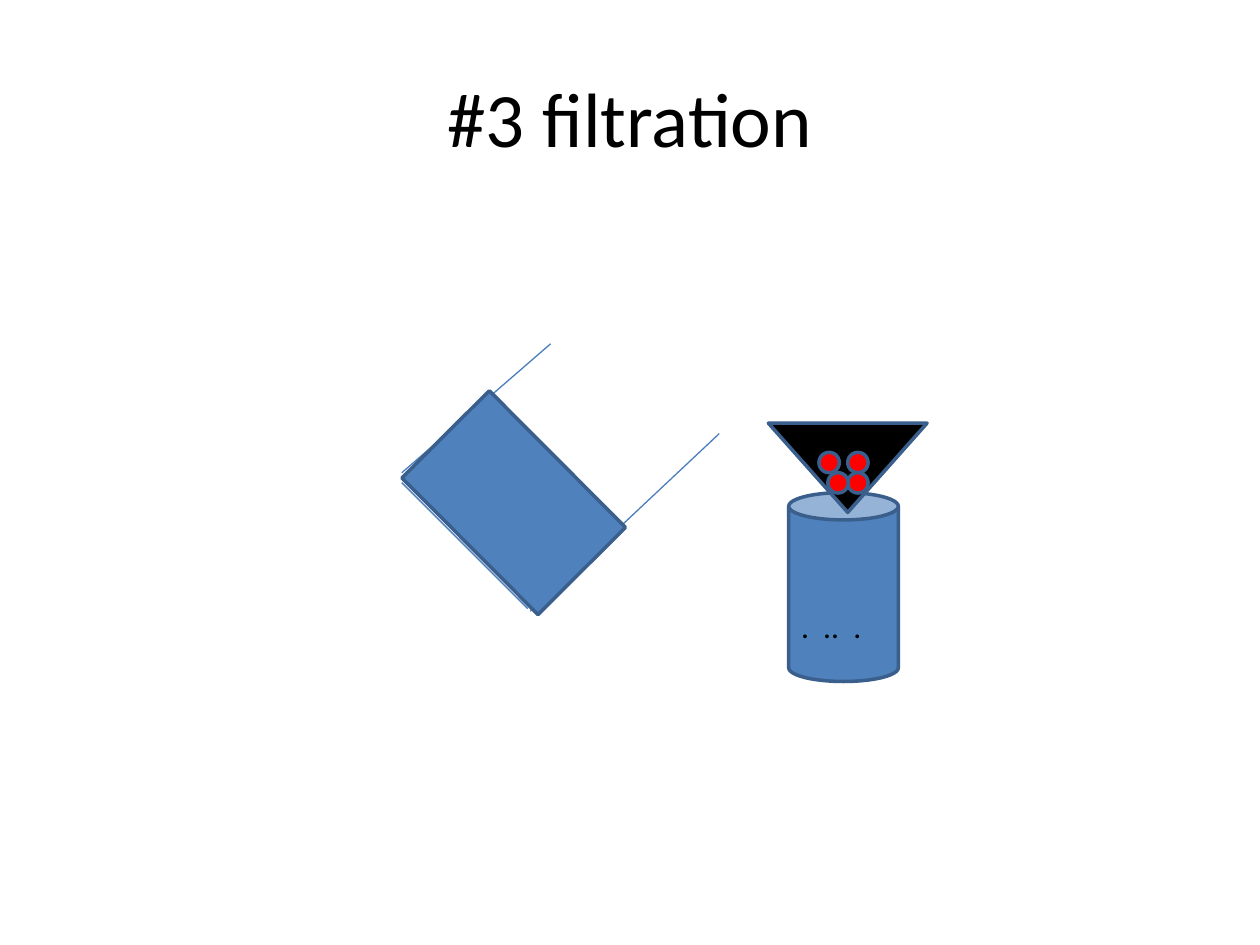
from dataclasses import dataclass

from lxml import etree
from pptx import Presentation
from pptx.dml.color import RGBColor
from pptx.enum.shapes import MSO_CONNECTOR, MSO_SHAPE
from pptx.enum.text import MSO_ANCHOR, PP_ALIGN
from pptx.oxml.ns import qn
from pptx.slide import Slide
from pptx.text.text import TextFrame
from pptx.util import Cm, Pt

CAN = MSO_SHAPE.CAN
FUNNEL = MSO_SHAPE.FLOWCHART_MERGE
RECTANGLE = MSO_SHAPE.RECTANGLE
OVAL = MSO_SHAPE.OVAL
STRAIGHT = MSO_CONNECTOR.STRAIGHT

BLUE = RGBColor(0x4F, 0x81, 0xBD)
OUTLINE = RGBColor(0x3A, 0x5F, 0x8C)
LINE_BLUE = RGBColor(0x4B, 0x7E, 0xBC)
RED = RGBColor(0xFF, 0x00, 0x00)
BLACK = RGBColor(0x00, 0x00, 0x00)

GRAIN_SIZE = 0.41


@dataclass(frozen=True)
class Part:
    """A filled piece of the apparatus, measured in centimetres."""
    kind: MSO_SHAPE
    left: float
    top: float
    width: float
    height: float
    fill: RGBColor
    rotation: float = 0


@dataclass(frozen=True)
class Edge:
    """A thin line between two points, measured in centimetres."""
    start_x: float
    start_y: float
    end_x: float
    end_y: float


JAR = Part(CAN, 15.9, 9.93, 2.21, 3.81, BLUE)
FILTER = Part(FUNNEL, 15.49, 8.53, 3.2, 1.8, BLACK)
LIQUID = Part(RECTANGLE, 8.41, 8.89, 3.89, 2.49, BLUE, 45.1)
BEAKER_EDGES = [
    Edge(8.1, 9.53, 11.1, 6.93),
    Edge(8.1, 9.73, 10.64, 12.27),
    Edge(10.69, 12.32, 14.5, 8.74),
]
GRAINS = [
    Part(OVAL, left, top, GRAIN_SIZE, GRAIN_SIZE, RED)
    for left, top in [(16.51, 9.12), (17.09, 9.12), (17.09, 9.53), (16.69, 9.53)]
]


def draw_part(slide: Slide, part: Part) -> None:
    shape = slide.shapes.add_shape(
        part.kind, Cm(part.left), Cm(part.top), Cm(part.width), Cm(part.height))
    shape.rotation = part.rotation
    shape.shadow.inherit = False
    shape.fill.solid()
    shape.fill.fore_color.rgb = part.fill
    shape.line.color.rgb = OUTLINE
    shape.line.width = Pt(2)


def draw_edge(slide: Slide, edge: Edge) -> None:
    connector = slide.shapes.add_connector(
        STRAIGHT, Cm(edge.start_x), Cm(edge.start_y), Cm(edge.end_x), Cm(edge.end_y))
    connector.line.color.rgb = LINE_BLUE
    connector.line.width = Pt(0.75)
    etree.SubElement(connector._element.spPr, qn("a:effectLst"))


def write_text(frame: TextFrame, text: str, size: float, alignment: PP_ALIGN) -> None:
    paragraph = frame.paragraphs[0]
    paragraph.alignment = alignment
    run = paragraph.add_run()
    run.text = text
    run.font.color.rgb = BLACK
    for name, value in {"name": "Calibri", "size": Pt(size)}.items():
        setattr(run.font, name, value)


def add_title(slide: Slide, text: str) -> None:
    title = slide.shapes.title
    position = {"left": Cm(1.27), "top": Cm(0.76), "width": Cm(22.86), "height": Cm(3.18)}
    for name, value in position.items():
        setattr(title, name, value)
    title.text_frame.vertical_anchor = MSO_ANCHOR.MIDDLE
    write_text(title.text_frame, text, 44, PP_ALIGN.CENTER)


def add_filtrate(slide: Slide) -> None:
    """Mark the fine particles that passed through the filter with dots."""
    box = slide.shapes.add_textbox(Cm(15.9), Cm(12.12), Cm(2.03), Cm(1.02))
    box.text_frame.word_wrap = False
    write_text(box.text_frame, ".  ..  .", 18, PP_ALIGN.LEFT)


def main() -> None:
    presentation = Presentation()
    presentation.slide_width, presentation.slide_height = Cm(25.4), Cm(19.05)
    slide = presentation.slides.add_slide(presentation.slide_layouts.get_by_name("Title Only"))

    add_title(slide, "#3 filtration")
    for part in (JAR, FILTER):
        draw_part(slide, part)
    for edge in BEAKER_EDGES:
        draw_edge(slide, edge)
    for part in (LIQUID, *GRAINS):
        draw_part(slide, part)
    add_filtrate(slide)

    presentation.save("out.pptx")


if __name__ == "__main__":
    main()
